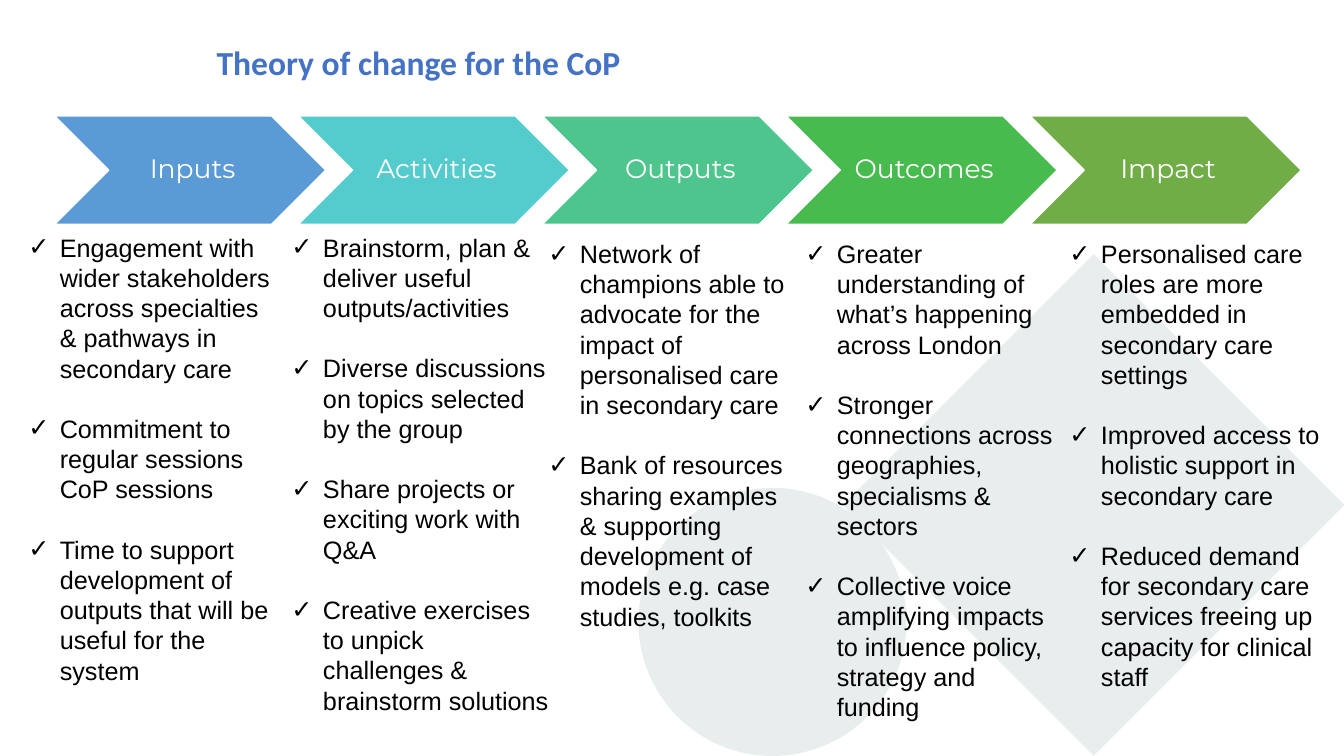
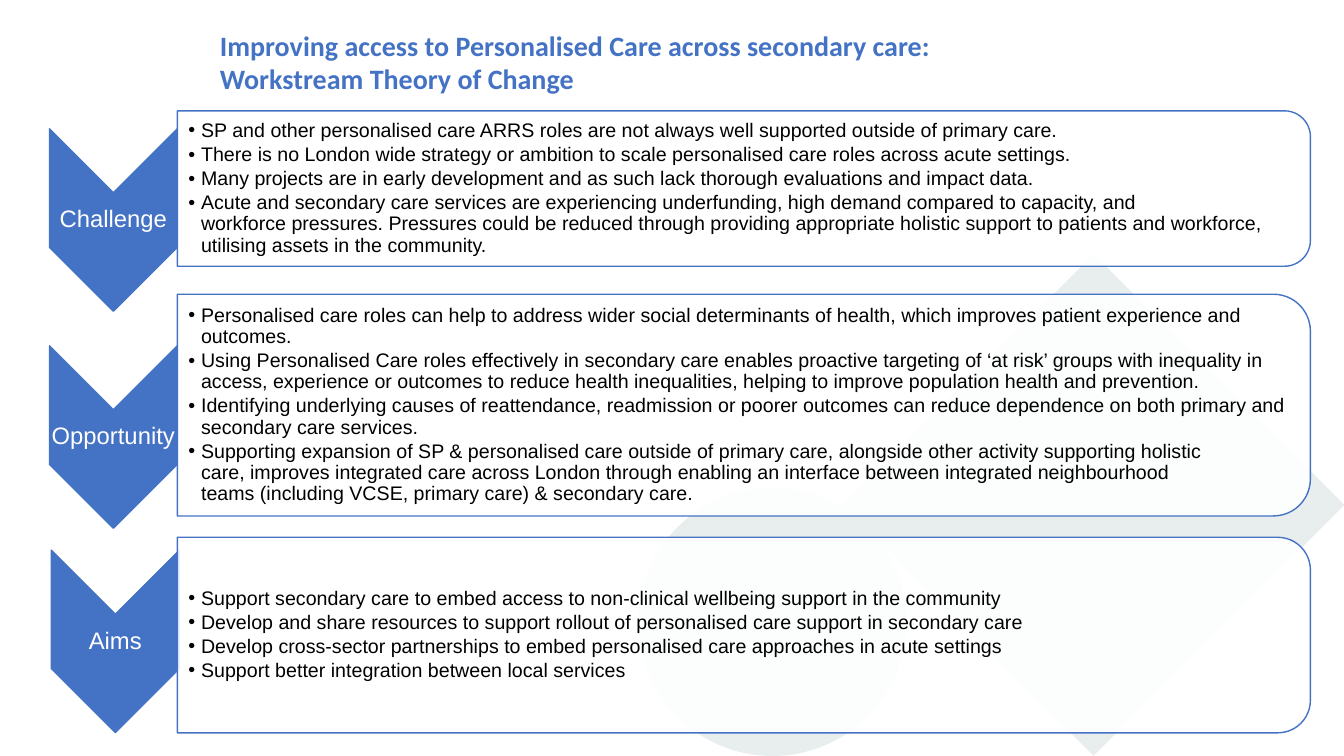
from copy import deepcopy

from lxml import etree
from pptx import Presentation
from pptx.dml.color import RGBColor
from pptx.enum.shapes import MSO_SHAPE
from pptx.enum.text import MSO_ANCHOR, MSO_AUTO_SIZE, PP_ALIGN
from pptx.oxml.ns import qn
from pptx.util import Pt

CHEVRON, ROUND_TOP = MSO_SHAPE.CHEVRON, MSO_SHAPE.ROUND_2_SAME_RECTANGLE
OVAL, RECTANGLE = MSO_SHAPE.OVAL, MSO_SHAPE.RECTANGLE
TOP, MIDDLE = MSO_ANCHOR.TOP, MSO_ANCHOR.MIDDLE
LEFT, CENTER = PP_ALIGN.LEFT, PP_ALIGN.CENTER
NO_AUTOFIT = MSO_AUTO_SIZE.NONE

COLORS = {
    "blue": "4472C4", "white": "FFFFFF", "black": "000000", "backdrop": "E8EDEE",
    "inputs": "5B9BD5", "activities": "54CCCD", "outputs": "4DC58D",
    "outcomes": "48BB4F", "impact": "70AD47",
}
TITLE_FONT = {"name": "Calibri", "bold": True, "color": "blue"}
STAGE_FONT = {"name": "Montserrat", "size": Pt(19), "color": "white"}
LABEL_FONT = {"name": "Arial", "size": Pt(17), "color": "white"}
CHECK_LIST = {
    "bullet": "✓", "indent": 22.5, "insets": (7.2, 3.6, 7.2, 3.6), "anchor": TOP,
    "font": {"name": "Arial", "size": Pt(18), "color": "black"},
    "spacing": {"line_spacing": 1.0, "space_after": Pt(0)}, "gap": 21.5,
}
DOT_LIST = {
    "bullet": "•", "indent": 9, "insets": (7.9, 0.7, 0.7, 0.7), "anchor": MIDDLE,
    "font": {"name": "Arial", "size": Pt(14), "color": "black"},
    "spacing": {"line_spacing": 0.9, "space_after": Pt(2)}, "gap": 0,
}
LIST_IDS = [1, 13, 14, 15, 16]
NBSP = chr(160)  # keeps word pairs on one line

# Stage name, colour, list box (left, top, width), list items
STAGES = [
    ("Inputs", "inputs", (13, 162, 194.4), [
        "Engagement with wider stakeholders across specialties & pathways in secondary care",
        "Commitment to regular sessions CoP sessions",
        "Time to support development of outputs that will be useful for the system"]),
    ("Activities", "activities", (201, 162, 198), [
        "Brainstorm, plan & deliver useful outputs/activities",
        "Diverse discussions on topics selected by the group",
        "Share projects or exciting work with Q&A",
        "Creative exercises to unpick challenges & brainstorm solutions"]),
    ("Outputs", "outputs", (384.5, 166.5, 189.4), [
        "Network of champions able to advocate for the impact of personalised care "
        "in secondary care",
        "Bank of resources sharing examples & supporting development of models "
        "e.g. case studies, toolkits"]),
    ("Outcomes", "outcomes", (568, 166.5, 198), [
        "Greater understanding of what’s happening across London",
        "Stronger connections across geographies, specialisms & sectors",
        "Collective voice amplifying impacts to influence policy, strategy and funding"]),
    ("Impact", "impact", (756.7, 166.5, 198), [
        "Personalised care roles are more embedded in secondary care settings",
        "Improved access to holistic support in secondary care",
        "Reduced demand for secondary care services freeing up capacity for clinical staff"]),
]

# Label, chevron (left, top), panel (top, height), list items
SECTIONS = [
    ("Challenge", (35.3, 92), (79.2, 111), [
        "SP and other personalised care ARRS roles are not always well supported outside "
        "of primary care.",
        "There is no London wide strategy or ambition to scale personalised care roles "
        "across acute settings.",
        "Many projects are in early development and as such lack thorough evaluations "
        "and impact data.",
        "Acute and secondary care services are experiencing underfunding, high demand "
        f"compared to capacity, and workforce{NBSP}pressures. Pressures could be reduced "
        "through providing appropriate holistic support to patients and workforce, "
        "utilising assets in the community."]),
    ("Opportunity", (35.3, 247), (210.2, 158.4), [
        "Personalised care roles can help to address wider social determinants of health, "
        "which improves patient experience and outcomes.",
        "Using Personalised Care roles effectively in secondary care enables proactive "
        "targeting of ‘at risk’ groups with inequality in access, experience or outcomes "
        "to reduce health inequalities, helping to improve population health and prevention.",
        "Identifying underlying causes of reattendance, readmission or poorer outcomes can "
        "reduce dependence on both primary and secondary care services.",
        "Supporting expansion of SP & personalised care outside of primary care, alongside "
        f"other activity supporting holistic care,{NBSP}improves integrated care across "
        "London through enabling an interface between integrated neighbourhood "
        f"teams{NBSP}(including VCSE, primary care) & secondary care."]),
    ("Aims", (36.7, 393), (383.8, 139.7), [
        "Support secondary care to embed access to non-clinical wellbeing support in the "
        "community",
        "Develop and share resources to support rollout of personalised care support in "
        "secondary care",
        "Develop cross-sector partnerships to embed personalised care approaches in acute "
        "settings",
        "Support better integration between local services"]),
]


def rgb(color):
    return RGBColor.from_string(COLORS[color])


def set_attributes(target, values):
    for attribute, value in values.items():
        setattr(target, attribute, value)


def place(shape, box):
    set_attributes(shape, dict(zip(("left", "top", "width", "height"), map(Pt, box))))


def set_frame(frame, insets, anchor, wrap=True):
    sides = ("margin_left", "margin_top", "margin_right", "margin_bottom")
    set_attributes(frame, dict(zip(sides, map(Pt, insets))))
    set_attributes(frame, {"auto_size": NO_AUTOFIT, "word_wrap": wrap,
                           "vertical_anchor": anchor})


def write(paragraph, text, font, align=LEFT):
    paragraph.alignment = align
    run = paragraph.add_run()
    run.text = text
    set_attributes(run.font, {k: v for k, v in font.items() if k != "color"})
    run.font.color.rgb = rgb(font["color"])


def add_shape(slide, kind, box, fill, line=None, rotation=0):
    """Draw a shape; box is the upright area it covers, before a quarter turn."""
    left, top, width, height = box
    if rotation == 90:
        left, top = left + (width - height) / 2, top + (height - width) / 2
        width, height = height, width
    shape = slide.shapes.add_shape(kind, *map(Pt, (left, top, width, height)))
    shape.rotation = rotation
    shape.shadow.inherit = False
    shape.fill.solid()
    shape.fill.fore_color.rgb = rgb(fill)
    if line:
        shape.line.color.rgb = rgb(line)
        shape.line.width = Pt(1)
    else:
        shape.line.fill.background()
    return shape


def add_title(slide, text, box, size, wrap=True):
    place(slide.shapes.title, box)
    frame = slide.shapes.title.text_frame
    set_frame(frame, (7.2, 3.6, 7.2, 3.6), TOP, wrap)
    write(frame.paragraphs[0], text, {**TITLE_FONT, "size": Pt(size)})


def fill_list(slide, list_id, items, box, style):
    placeholder = slide.placeholders[list_id]
    slide.shapes.element.append(placeholder.element)  # bring to front
    place(placeholder, box)
    frame = placeholder.text_frame
    set_frame(frame, style["insets"], style["anchor"])
    for number, item in enumerate(items):
        paragraph = frame.add_paragraph() if number else frame.paragraphs[0]
        set_attributes(paragraph, style["spacing"])
        paragraph.space_before = Pt(style["gap"] if number else 0)
        properties = paragraph._p.get_or_add_pPr()
        properties.set("marL", str(Pt(style["indent"])))
        properties.set("indent", str(-Pt(style["indent"])))
        etree.SubElement(properties, qn("a:buChar")).set("char", style["bullet"])
        write(paragraph, item, style["font"])


def extend_layout(layout):
    """Give the layout one list placeholder for each stage."""
    first = next(p for p in layout.placeholders if p.placeholder_format.idx == 1)
    for list_id in LIST_IDS[1:]:
        extra = deepcopy(first.element)
        extra.find(".//" + qn("p:cNvPr")).set("id", str(100 + list_id))
        extra.find(".//" + qn("p:ph")).set("idx", str(list_id))
        layout.shapes.element.append(extra)


def add_backdrop(slide, layout):
    """Draw the pale circle and diamond, then move them into the layout."""
    circle = add_shape(slide, OVAL, (456, 348.5, 191.5, 191.5), "backdrop")
    diamond = add_shape(slide, RECTANGLE, (654.5, 234, 253.4, 253.4), "backdrop", rotation=45)
    for position, part in enumerate((circle, diamond), start=2):
        part.element.find(".//" + qn("p:cNvPr")).set("id", str(200 + position))
        layout.shapes.element.insert(position, part.element)


def add_stage(slide, box, name, color):
    chevron = add_shape(slide, CHEVRON, box, color, "white")
    set_frame(chevron.text_frame, (5.8, 2.2, 2.2, 2.2), MIDDLE)
    paragraph = chevron.text_frame.paragraphs[0]
    paragraph.line_spacing = 0.9
    write(paragraph, name, STAGE_FONT, CENTER)


def build_stages(slide):
    add_title(slide, "Theory of change for the CoP", (147.5, 26.6, 324, 36), 24, wrap=False)
    for number, (name, color, (left, top, width), items) in enumerate(STAGES):
        add_stage(slide, (38.9 + 174.2 * number, 82.8, 193.7, 77.5), name, color)
        fill_list(slide, LIST_IDS[number], items, (left, top, width, 540 - top), CHECK_LIST)


def add_section(slide, list_id, label, corner, panel_box, items):
    # Down-pointing chevron with its label
    left, top = corner
    width, height, label_height = 91.4, 130.3, 39
    add_shape(slide, CHEVRON, (left, top, width, height), "blue", "blue", rotation=90)
    label_box = (left, top + (height - label_height) / 2, width, label_height)
    caption = slide.shapes.add_textbox(*map(Pt, label_box))
    set_frame(caption.text_frame, (0.7,) * 4, MIDDLE)
    paragraph = caption.text_frame.paragraphs[0]
    paragraph.line_spacing = 0.9
    write(paragraph, label, LABEL_FONT, CENTER)

    # Panel, rounded on the right, slightly see-through
    panel = add_shape(slide, ROUND_TOP, panel_box, "white", "blue", rotation=90)
    tint = panel.element.spPr.find(qn("a:solidFill"))[0]
    etree.SubElement(tint, qn("a:alpha")).set("val", "90000")

    # List, kept clear of the rounded corners
    x, y, panel_width, panel_height = panel_box
    inset = 0.05 * panel_height
    list_box = (x, y + inset, panel_width - inset, panel_height - 2 * inset)
    fill_list(slide, list_id, items, list_box, DOT_LIST)


def build_sections(slide):
    add_title(slide, "Improving access to Personalised Care across secondary care: "
              "Workstream Theory of Change", (149.8, 16.6, 589.7, 56.2), 20)
    for list_id, (label, corner, (top, height), items) in zip(LIST_IDS, SECTIONS):
        add_section(slide, list_id, label, corner, (126.7, top, 809.3, height), items)
    for list_id in LIST_IDS[len(SECTIONS):]:
        unused = slide.placeholders[list_id].element
        unused.getparent().remove(unused)


def main():
    prs = Presentation()
    prs.slide_width, prs.slide_height = Pt(960), Pt(540)
    layout = prs.slide_layouts[1]
    extend_layout(layout)
    stages_slide, sections_slide = (prs.slides.add_slide(layout) for _ in range(2))
    add_backdrop(stages_slide, layout)
    build_stages(stages_slide)
    build_sections(sections_slide)
    prs.save("out.pptx")


if __name__ == "__main__":
    main()
